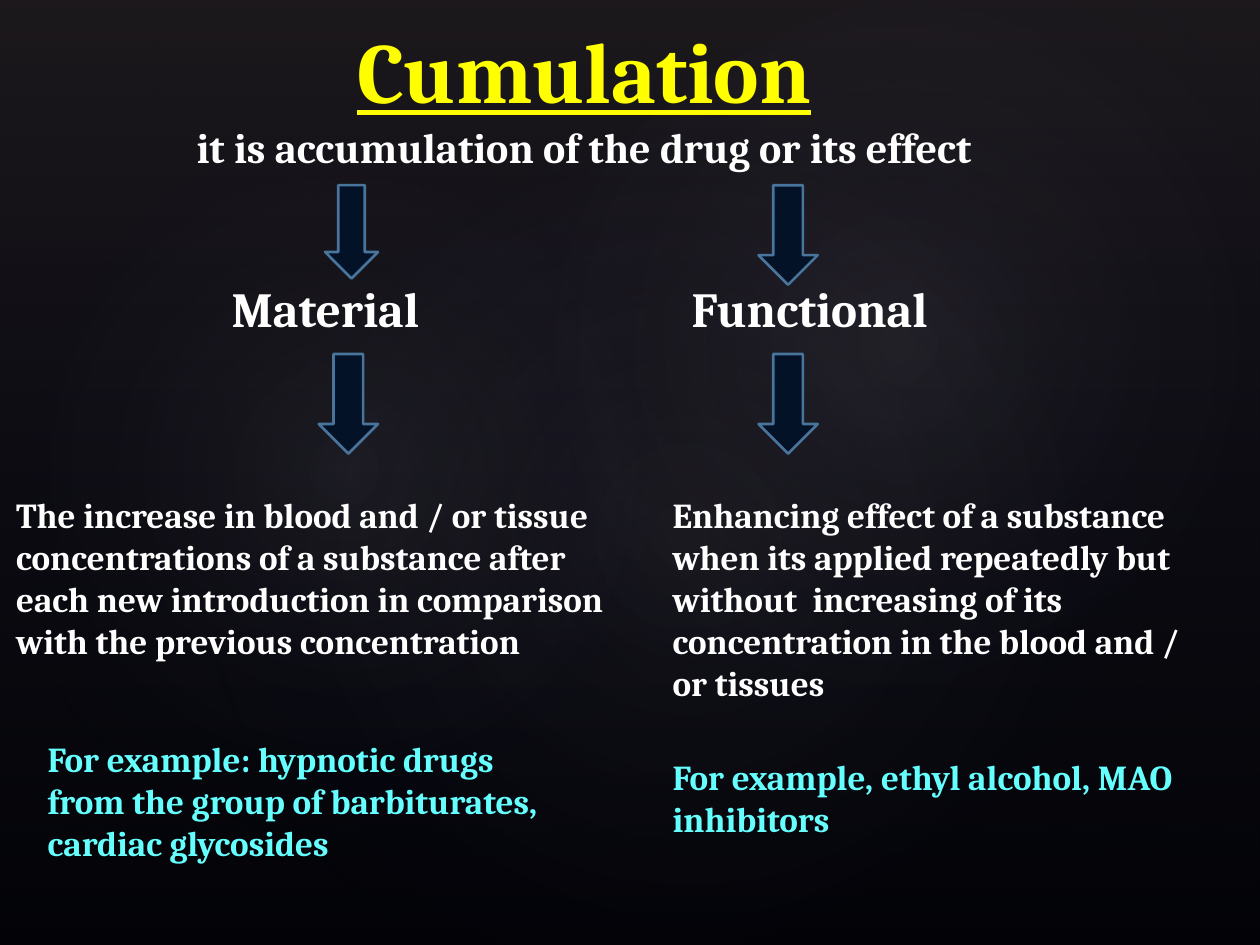
import pptx
import pptx.util
import pptx.oxml
import pptx.dml.color
import pptx.enum.shapes
import pptx.enum.text

Inches, Pt = pptx.util.Inches, pptx.util.Pt
Shape = pptx.enum.shapes.MSO_SHAPE
Text = pptx.enum.text
hue = pptx.dml.color.RGBColor.from_string
NS = "http://schemas.openxmlformats.org/drawingml/2006/main"

deck = pptx.Presentation()
deck.slide_width, deck.slide_height = Inches(10), Inches(7.5)
slide = deck.slides.add_slide(deck.slide_layouts[6])
slide.background.fill.solid()
slide.background.fill.fore_color.rgb = hue("000000")


def add_shape(kind, box):
    shape = slide.shapes.add_shape(kind, *map(Inches, box))
    shape.shadow.inherit = False
    return shape


def add_text(box, lines, size, color):
    frame = slide.shapes.add_textbox(*map(Inches, box)).text_frame
    frame.word_wrap = True
    frame.text = lines
    for para in frame.paragraphs:
        font = para.font
        font.name, font.size, font.bold = "Cambria", Pt(size), True
        font.color.rgb = hue(color)
    return frame


round_way = '<a:path path="circle"><a:fillToRect l="50000" t="50000" r="50000" b="50000"/></a:path>'
down_way = '<a:lin ang="5400000" scaled="0"/>'
glows = [
    (Shape.RECTANGLE, (0, 0, 10, 7.5), 0, "504652", 36, 100, 10, down_way),
    (Shape.OVAL, (1.5, 1.14, 7.92, 6.24), 328.7, "C4BCC6", 7, 58, 0, round_way),
    (Shape.OVAL, (-0.3, 1.28, 6.06, 4.9), 294.3, "C4BCC6", 8, 58, 0, round_way),
    (Shape.OVAL, (3.58, 0.13, 7.09, 5.2), 328.7, "C4BCC6", 8, 58, 0, round_way),
]
for kind, box, turn, color, start, stop, end, way in glows:
    glow = add_shape(kind, box)
    glow.rotation = turn
    glow.line.fill.background()
    stops = "".join(
        f'<a:gs pos="{pos * 1000}"><a:srgbClr val="{tint}"><a:alpha val="{alpha * 1000}"/></a:srgbClr></a:gs>'
        for pos, tint, alpha in [(0, color, start), (stop, "242852", end)]
    )
    fill = f'<a:gradFill xmlns:a="{NS}" rotWithShape="1"><a:gsLst>{stops}</a:gsLst>{way}</a:gradFill>'
    glow.element.spPr.find(f"{{{NS}}}prstGeom").addnext(pptx.oxml.parse_xml(fill))

title = add_text((0.51, 0.23, 8.25, 1.18), "", 24, "FFFFFF")
title.vertical_anchor = Text.MSO_ANCHOR.BOTTOM
para = title.paragraphs[0]
para.alignment = Text.PP_ALIGN.CENTER
head = para.add_run()
head.text = "Cumulation"
head.font.size, head.font.underline = Pt(49), True
head.font.color.rgb = hue("FFFF00")
para.add_line_break()
para.add_run().text = "it is accumulation of the drug or its effect"

arrows = [
    (2.58, 1.47, 0.42, 0.74),
    (6.02, 1.47, 0.47, 0.79),
    (2.53, 2.81, 0.47, 0.79),
    (6.02, 2.81, 0.47, 0.79),
]
for box in arrows:
    arrow = add_shape(Shape.DOWN_ARROW, box)
    arrow.fill.solid()
    arrow.fill.fore_color.rgb = hue("031227")
    arrow.line.color.rgb = hue("49749B")
    arrow.line.width = Pt(1.5)

texts = [
    ((1.74, 2.16, 2.16, 0.57), "Material", 28, "FFFFFF"),
    ((5.39, 2.16, 2.91, 0.57), "Functional", 28, "FFFFFF"),
    ((0.03, 3.87, 5, 1.45),
     "The increase in blood and / or tissue concentrations of a substance after "
     "each new introduction in comparison with the previous concentration", 20, "FFFFFF"),
    ((5.24, 3.87, 4.37, 1.78),
     "Enhancing effect of a substance  when its applied repeatedly but "
     "without  increasing of its concentration in the blood and / or tissues", 20, "FFFFFF"),
    ((0.28, 5.8, 4.26, 1.11),
     "For example: hypnotic drugs  from the group of barbiturates,\ncardiac glycosides", 20, "66FFFF"),
    ((5.24, 5.95, 4.3, 0.77), "For example, ethyl alcohol, MAO inhibitors", 20, "66FFFF"),
]
for item in texts:
    add_text(*item)

deck.save("out.pptx")
